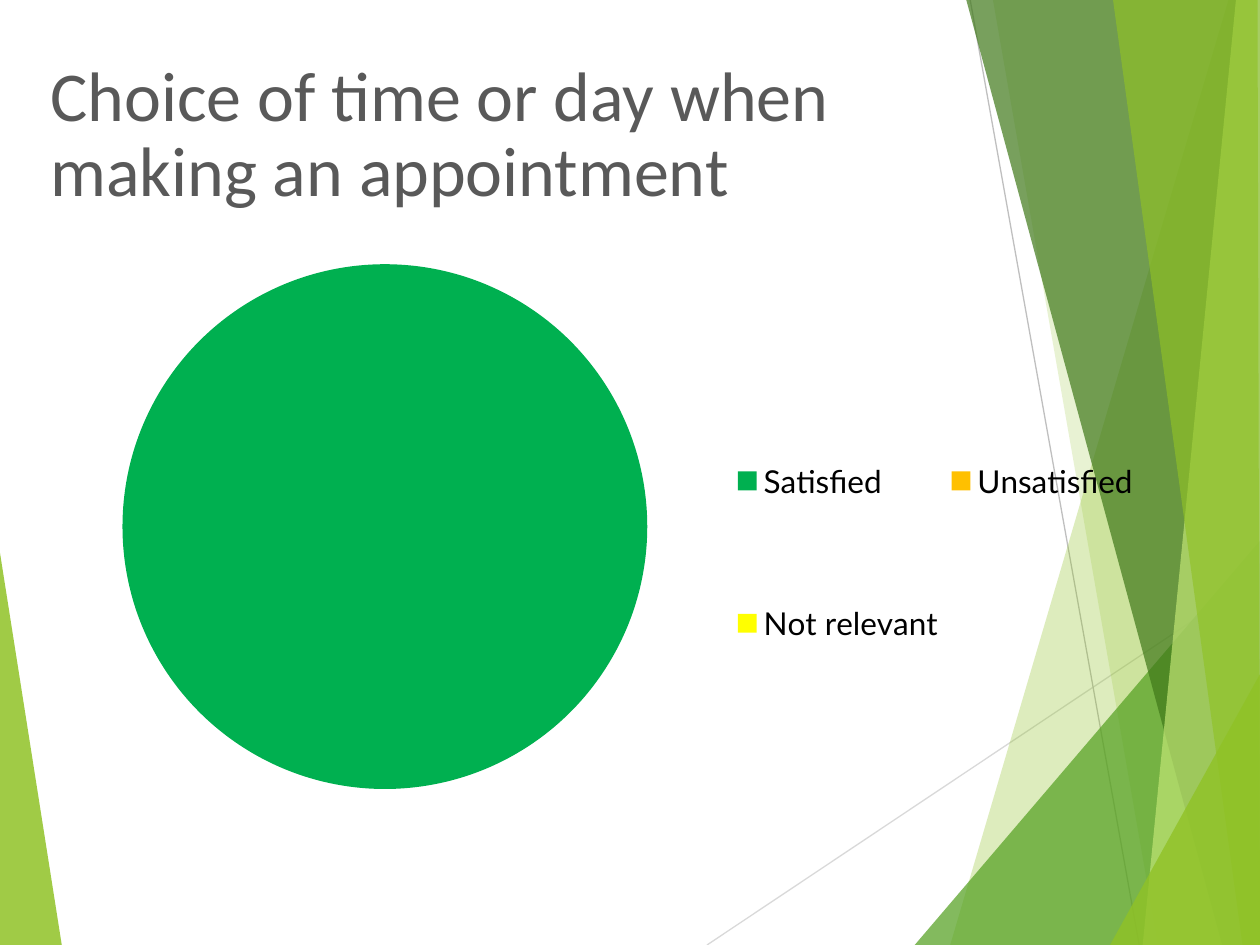
import dataclasses

import lxml.etree
import pptx
import pptx.chart.data
import pptx.dml.color
import pptx.enum.chart
import pptx.enum.shapes
import pptx.enum.text
import pptx.oxml
import pptx.oxml.ns
import pptx.util

Pt = pptx.util.Pt
qn = pptx.oxml.ns.qn

COLORS = {
    "lime": "90C226",
    "pale": "C0E474",
    "green": "54A021",
    "dark": "3F7819",
    "line": "D9D9D9",
    "line_dark": "BFBFBF",
    "title": "595959",
    "text": "000000",
    "satisfied": "00B050",
    "unsatisfied": "FFC000",
    "irrelevant": "FFFF00",
}
WIDTH, HEIGHT = 720, 540


@dataclasses.dataclass
class Facet:
    points: list[tuple[float, float]]
    color: str
    opacity: int


@dataclasses.dataclass
class Ray:
    start: tuple[float, float]
    end: tuple[float, float]
    color: str


@dataclasses.dataclass
class Answer:
    label: str
    value: int
    color: str


RAYS = [
    Ray((404, HEIGHT), (WIDTH, 329), "line"),
    Ray((554.4, 0), (651, HEIGHT), "line_dark"),
]
FACETS = [
    Facet([(0, 316), (35.3, HEIGHT), (0, HEIGHT)], "lime", 85),
    Facet([(702, 0), (543, HEIGHT), (WIDTH, HEIGHT), (WIDTH, 0)], "lime", 30),
    Facet([(567.4, 0), (661.7, HEIGHT), (WIDTH, HEIGHT), (WIDTH, 0)], "lime", 20),
    Facet([(522.7, HEIGHT), (WIDTH, 309), (WIDTH, HEIGHT)], "green", 72),
    Facet([(552.2, 0), (698.4, HEIGHT), (WIDTH, HEIGHT), (WIDTH, 0)], "dark", 70),
    Facet([(706.3, 0), (653, HEIGHT), (WIDTH, HEIGHT), (WIDTH, 0)], "pale", 70),
    Facet([(636, 0), (710, HEIGHT), (WIDTH, HEIGHT), (718.6, 0)], "lime", 65),
    Facet([(634.3, HEIGHT), (WIDTH, 385.2), (WIDTH, HEIGHT)], "lime", 80),
]
ANSWERS = [
    Answer("Satisfied", 100, "satisfied"),
    Answer("Unsatisfied", 0, "unsatisfied"),
    Answer("Not relevant", 0, "irrelevant"),
]


def rgb(name: str) -> pptx.dml.color.RGBColor:
    return pptx.dml.color.RGBColor.from_string(COLORS[name])


def draw_ray(s, ray: Ray) -> None:
    line = s.shapes.add_connector(
        pptx.enum.shapes.MSO_CONNECTOR.STRAIGHT,
        *(Pt(v) for v in ray.start + ray.end),
    )
    line.line.color.rgb = rgb(ray.color)
    line.line.width = Pt(0.75)
    lxml.etree.SubElement(line._element.spPr, qn("a:effectLst"))


def draw_facet(s, facet: Facet) -> None:
    points = [(Pt(x), Pt(y)) for x, y in facet.points]
    builder = s.shapes.build_freeform(*points[0])
    builder.add_line_segments(points[1:], close=True)
    sp = builder.convert_to_shape()
    sp.shadow.inherit = False
    sp.line.fill.background()
    sp.fill.solid()
    sp.fill.fore_color.rgb = rgb(facet.color)
    color = sp._element.spPr.find(".//" + qn("a:srgbClr"))
    lxml.etree.SubElement(color, qn("a:alpha"), val=str(facet.opacity * 1000))


def write_title(s, text: str) -> None:
    sp = s.shapes.title
    s.shapes._spTree.append(sp._element)
    sp.left, sp.top, sp.width, sp.height = Pt(21.6), Pt(26), Pt(561.6), Pt(103.7)
    tf = sp.text_frame
    tf.word_wrap = True
    tf.auto_size = pptx.enum.text.MSO_AUTO_SIZE.NONE
    tf.vertical_anchor = pptx.enum.text.MSO_ANCHOR.MIDDLE
    p = tf.paragraphs[0]
    p.alignment = pptx.enum.text.PP_ALIGN.LEFT
    p.line_spacing = 0.9
    r = p.add_run()
    r.text = text
    r.font.size = Pt(40)
    r.font.name = "Calibri"
    r.font.color.rgb = rgb("title")


def set_layout(parent, position: int, inner: bool, x: float, y: float, w: float, h: float) -> None:
    for old in parent.findall(qn("c:layout")):
        parent.remove(old)
    layout = lxml.etree.Element(qn("c:layout"))
    manual = lxml.etree.SubElement(layout, qn("c:manualLayout"))
    settings = {"layoutTarget": "inner"} if inner else {}
    settings |= {"xMode": "edge", "yMode": "edge", "x": x, "y": y, "w": w, "h": h}
    for tag, value in settings.items():
        lxml.etree.SubElement(manual, qn(f"c:{tag}"), val=str(value))
    parent.insert(position, layout)


def draw_pie(s, answers: list[Answer]) -> None:
    data = pptx.chart.data.CategoryChartData()
    data.categories = [a.label for a in answers]
    data.add_series("Series 1", [a.value for a in answers])
    chart = s.shapes.add_chart(
        pptx.enum.chart.XL_CHART_TYPE.PIE,
        Pt(-76.3), Pt(139.7), Pt(731.5), Pt(322.6), data,
    ).chart
    chart.has_title = False
    chart.font.size = Pt(18)
    chart.font.name = "Lato"
    chart.font.color.rgb = rgb("text")
    plot = chart.plots[0]
    plot.vary_by_categories = True
    for i, answer in enumerate(answers):
        fill = plot.series[0].points[i].format.fill
        fill.solid()
        fill.fore_color.rgb = rgb(answer.color)
    chart.has_legend = True
    chart.legend.position = pptx.enum.chart.XL_LEGEND_POSITION.RIGHT
    chart.legend.include_in_layout = False
    set_layout(chart._chartSpace.find(".//" + qn("c:plotArea")), 0, True, 0.2, 0.03, 0.41, 0.94)
    set_layout(chart.legend._element, 1, False, 0.67, 0.2, 0.33, 0.69)


def main() -> None:
    prs = pptx.Presentation()
    prs.slide_width, prs.slide_height = Pt(WIDTH), Pt(HEIGHT)
    s = prs.slides.add_slide(prs.slide_layouts[5])
    for ray in RAYS:
        draw_ray(s, ray)
    for facet in FACETS:
        draw_facet(s, facet)
    write_title(s, "Choice of time or day when making an appointment")
    draw_pie(s, ANSWERS)
    prs.save("out.pptx")


if __name__ == "__main__":
    main()
